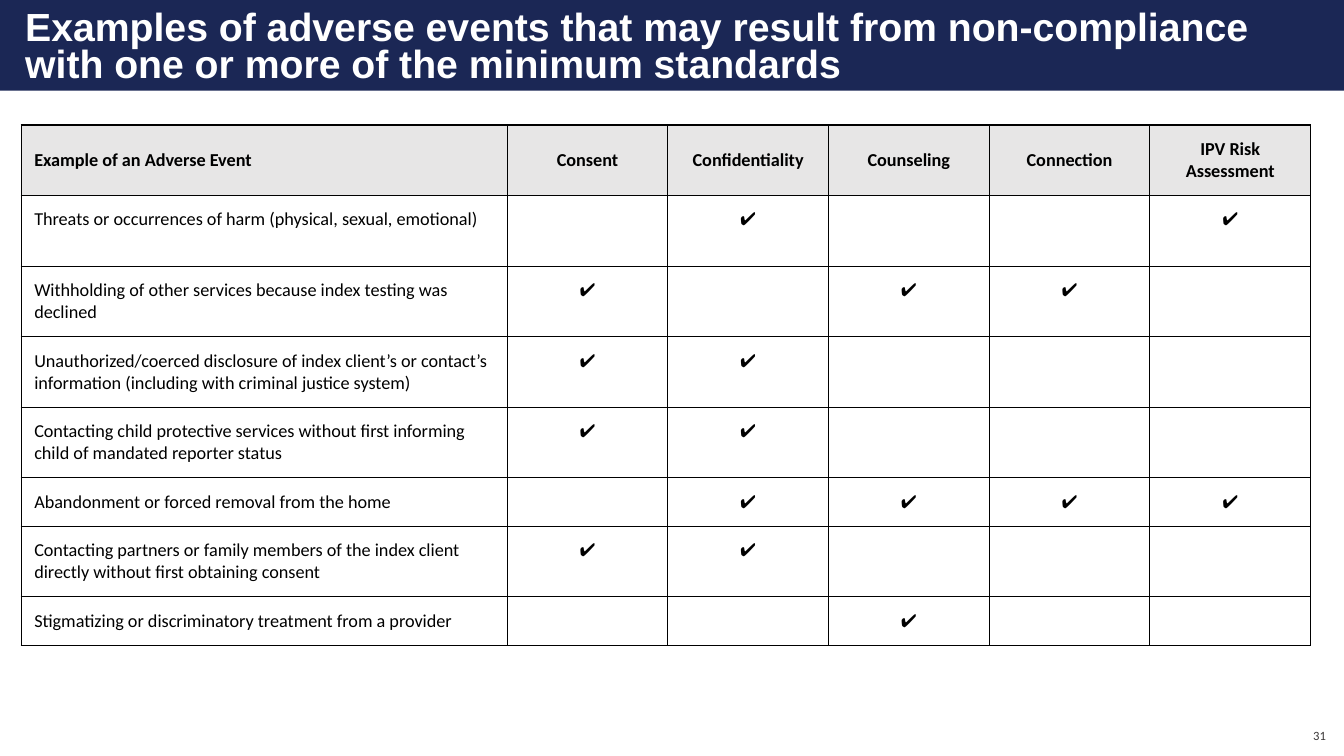
import lxml.etree
import pptx
import pptx.dml.color
import pptx.enum.shapes
import pptx.enum.text
import pptx.oxml.ns
import pptx.util

Inches = pptx.util.Inches
Pt = pptx.util.Pt
RGBColor = pptx.dml.color.RGBColor
ALIGN = pptx.enum.text.PP_ALIGN
ANCHOR = pptx.enum.text.MSO_ANCHOR

NAVY = RGBColor(0x1B, 0x27, 0x55)
WHITE = RGBColor(0xFF, 0xFF, 0xFF)
BLACK = RGBColor(0, 0, 0)
HEADER_GRAY = RGBColor(0xE7, 0xE6, 0xE6)
NUMBER_GRAY = RGBColor(0x3B, 0x38, 0x38)

TITLE = ("Examples of adverse events that may result from non-compliance "
         "with one or more of the minimum standards")
STANDARDS = ["Consent", "Confidentiality", "Counseling", "Connection",
             "IPV Risk Assessment"]
EVENTS = [
    ("Threats or occurrences of harm (physical, sexual, emotional)",
     {"Confidentiality", "IPV Risk Assessment"}, 0.7),
    ("Withholding of other services because index testing was declined",
     {"Consent", "Counseling", "Connection"}, 0.7),
    ("Unauthorized/coerced disclosure of index client’s or contact’s "
     "information (including with criminal justice system)",
     {"Consent", "Confidentiality"}, 0.7),
    ("Contacting child protective services without first informing child "
     "of mandated reporter status", {"Consent", "Confidentiality"}, 0.7),
    ("Abandonment or forced removal from the home",
     {"Confidentiality", "Counseling", "Connection", "IPV Risk Assessment"}, 0.48),
    ("Contacting partners or family members of the index client directly "
     "without first obtaining consent", {"Consent", "Confidentiality"}, 0.7),
    ("Stigmatizing or discriminatory treatment from a provider",
     {"Counseling"}, 0.48),
]


def set_margins(target, margin):
    """Give a cell or text frame the same margin on all four sides."""
    for side in ("left", "top", "right", "bottom"):
        setattr(target, f"margin_{side}", Inches(margin))


def format_text(frame, font_name, size, color, bold=False, align=ALIGN.LEFT):
    """Format every paragraph and run of a text frame."""
    for para in frame.paragraphs:
        para.alignment = align
        for span in para.runs:
            span.font.name = font_name
            span.font.size = Pt(size)
            span.font.bold = bold
            span.font.color.rgb = color


def add_banner_title(page, left, top, width, height):
    """Draw the title banner and place the title placeholder on it."""
    banner = page.shapes.add_shape(
        pptx.enum.shapes.MSO_SHAPE.RECTANGLE,
        Inches(left), Inches(top), Inches(width), Inches(height))
    banner.shadow.inherit = False
    banner.fill.solid()
    banner.fill.fore_color.rgb = NAVY
    banner.line.fill.background()

    title = page.shapes.title
    title.element.addprevious(banner.element)
    title.left, title.top = Inches(left + 0.25), Inches(top + 0.11)
    title.width, title.height = Inches(12.79), Inches(1.13)
    frame = title.text_frame
    frame.text = TITLE
    frame.word_wrap = True
    frame.auto_size = pptx.enum.text.MSO_AUTO_SIZE.NONE
    frame.vertical_anchor = ANCHOR.TOP
    set_margins(frame, 0)
    frame.paragraphs[0].line_spacing = 0.8
    format_text(frame, "Arial", 28, WHITE, bold=True)


def add_borders(cell):
    """Draw a thin black line on each side of a cell."""
    properties = cell._tc.get_or_add_tcPr()
    for side in ("lnL", "lnR", "lnT", "lnB"):
        line = lxml.etree.SubElement(
            properties, pptx.oxml.ns.qn(f"a:{side}"), w=str(Pt(1)))
        fill = lxml.etree.SubElement(line, pptx.oxml.ns.qn("a:solidFill"))
        lxml.etree.SubElement(
            fill, pptx.oxml.ns.qn("a:srgbClr"), val=str(BLACK))


def fill_cell(cell, text, is_header, is_event):
    """Set the border, fill and text of one table cell."""
    add_borders(cell)
    cell.fill.solid()
    cell.fill.fore_color.rgb = HEADER_GRAY if is_header else WHITE
    if text:
        set_margins(cell, 0.13)
        cell.vertical_anchor = ANCHOR.MIDDLE if is_header else ANCHOR.TOP
        cell.text_frame.text = text
        format_text(cell.text_frame, "Calibri", 13, BLACK, is_header,
                    ALIGN.LEFT if is_event else ALIGN.CENTER)


def add_event_table(page, left, top, width, event_width):
    """Add the table that matches adverse events with minimum standards."""
    rows = [["Example of an Adverse Event", *STANDARDS]]
    for event, breached, _ in EVENTS:
        rows.append([event] + ["✔" if name in breached else "" for name in STANDARDS])
    heights = [0.7] + [height for _, _, height in EVENTS]
    table = page.shapes.add_table(
        len(rows), len(rows[0]), Inches(left), Inches(top),
        Inches(width), Inches(sum(heights))).table
    table.first_row = False
    table.horz_banding = False
    standard_width = (width - event_width) / len(STANDARDS)
    for index, column in enumerate(table.columns):
        column.width = Inches(standard_width if index else event_width)
    for row_index, (texts, height) in enumerate(zip(rows, heights)):
        table.rows[row_index].height = Inches(height)
        for column_index, text in enumerate(texts):
            fill_cell(table.cell(row_index, column_index), text,
                      row_index == 0, column_index == 0)


def add_page_number(page, left, top, width, height):
    """Add the page number in the lower right corner."""
    box = page.shapes.add_textbox(
        Inches(left), Inches(top), Inches(width), Inches(height))
    frame = box.text_frame
    frame.word_wrap = True
    frame.vertical_anchor = ANCHOR.MIDDLE
    frame.text = "31"
    format_text(frame, "Calibri", 9, NUMBER_GRAY, align=ALIGN.RIGHT)


def main():
    """Build the slide and save it."""
    deck = pptx.Presentation()
    deck.slide_width, deck.slide_height = Inches(13.33), Inches(7.5)
    page = deck.slides.add_slide(deck.slide_layouts.get_by_name("Title Only"))
    add_banner_title(page, 0, 0, 13.33, 0.9)
    add_page_number(page, 12.61, 7.1, 0.64, 0.4)
    add_event_table(page, 0.21, 1.24, 12.79, 4.82)
    deck.save("out.pptx")


if __name__ == "__main__":
    main()
